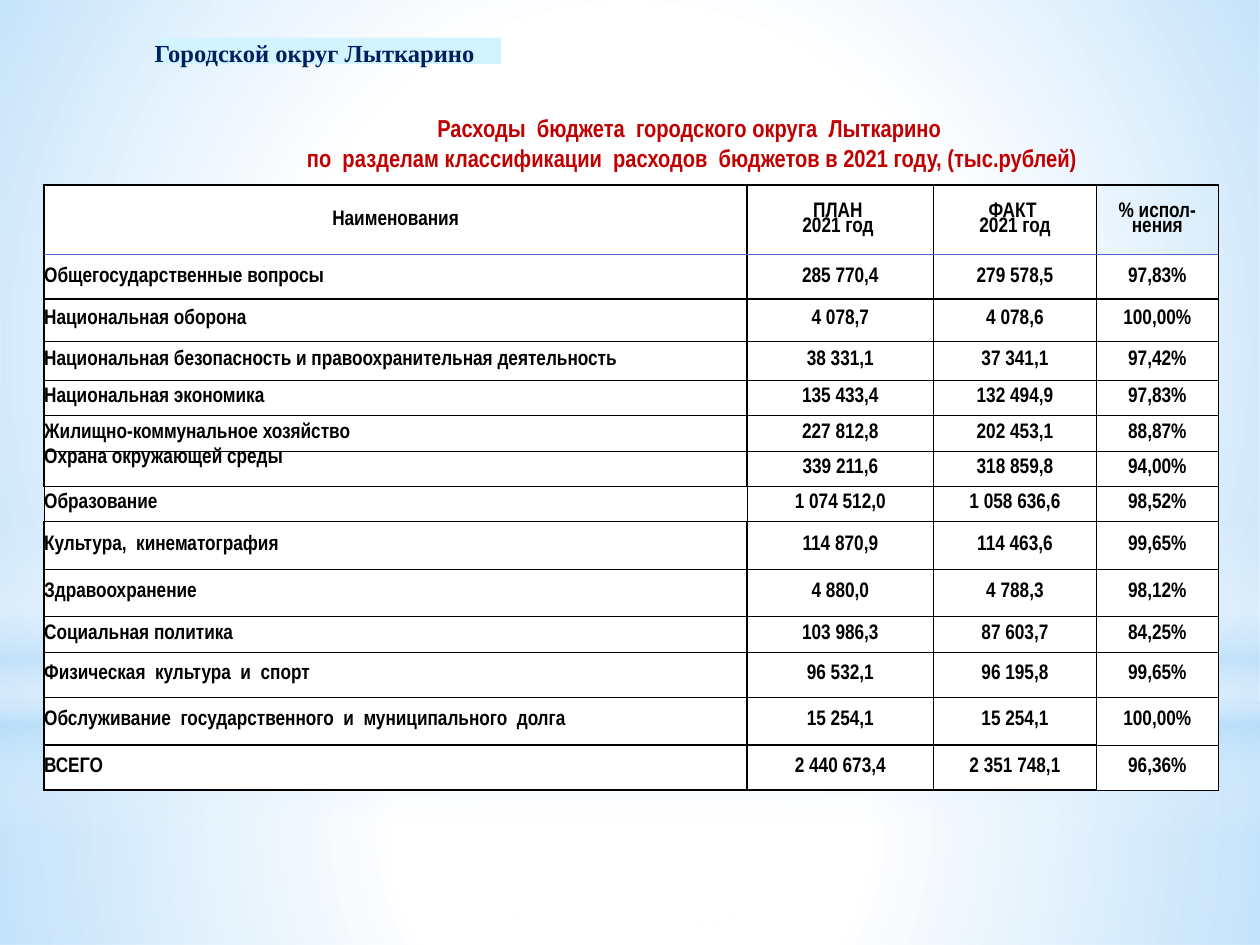
from copy import deepcopy
from dataclasses import dataclass

from lxml import etree
from pptx import Presentation
from pptx.dml.color import RGBColor
from pptx.enum.shapes import MSO_CONNECTOR, MSO_SHAPE
from pptx.enum.text import MSO_ANCHOR, PP_ALIGN
from pptx.oxml.ns import qn
from pptx.util import Cm, Pt

RECTANGLE, OVAL = MSO_SHAPE.RECTANGLE, MSO_SHAPE.OVAL
STRAIGHT = MSO_CONNECTOR.STRAIGHT
TOP, MIDDLE = MSO_ANCHOR.TOP, MSO_ANCHOR.MIDDLE
LEFT, CENTER = PP_ALIGN.LEFT, PP_ALIGN.CENTER

COLORS = {
    "white": "FFFFFF", "sky": "B4DCFA", "label": "D3F4FF", "navy": "002060",
    "black": "000000", "red": "C00000", "rule": "4E67C8",
}
NARROW, SERIF = "Arial Narrow", "Times New Roman"
PLAIN_TABLE = "{2D5ABB26-0587-4C30-8999-92F81FD0307C}"
SIDES = "LRTB"
THIN, THICK = 0.5, 1


@dataclass
class Glow:
    geometry: MSO_SHAPE
    top: float
    height: float
    stops: list[tuple[int, str, int]]
    radial: bool = True


@dataclass
class Expense:
    name: str
    plan: str
    fact: str
    share: str
    height: float


GLOWS = [
    Glow(RECTANGLE, 14.17, 4.88, [(0, "white", 91), (37, "white", 76), (100, "sky", 79)]),
    Glow(RECTANGLE, 0, 14.17, [(0, "white", 89), (48, "white", 62), (100, "sky", 79)]),
    Glow(RECTANGLE, 10.46, 6.35,
         [(0, "white", 0), (29, "white", 30), (45, "sky", 40),
          (55, "white", 26), (65, "sky", 60), (100, "white", 0)], radial=False),
    Glow(OVAL, 4.45, 14.17, [(0, "white", 100), (56, "white", 0)]),
]

EXPENSES = [
    Expense("Наименования", "ПЛАН \v2021 год ", "ФАКТ \v2021 год", "% испол-\vнения", 1.42),
    Expense("Общегосударственные вопросы", "285 770,4", "279 578,5", "97,83%", 0.88),
    Expense("Национальная оборона", "4 078,7", "4 078,6", "100,00%", 0.85),
    Expense("Национальная безопасность и правоохранительная деятельность",
            "38 331,1", "37 341,1", "97,42%", 0.79),
    Expense("Национальная экономика", "135 433,4", "132 494,9", "97,83%", 0.71),
    Expense("Жилищно-коммунальное хозяйство", "227 812,8", "202 453,1", "88,87%", 0.71),
    Expense("Охрана окружающей среды", "339 211,6", "318 859,8", "94,00%", 0.71),
    Expense("Образование", "1 074 512,0", "1 058 636,6", "98,52%", 0.71),
    Expense("Культура,  кинематография", "114 870,9", "114 463,6", "99,65%", 0.97),
    Expense("Здравоохранение", "4 880,0", "4 788,3", "98,12%", 0.94),
    Expense("Социальная политика", "103 986,3", "87 603,7", "84,25%", 0.74),
    Expense("Физическая  культура  и  спорт", "96 532,1", "96 195,8", "99,65%", 0.89),
    Expense("Обслуживание  государственного  и  муниципального  долга",
            "15 254,1", "15 254,1", "100,00%", 0.97),
    Expense("ВСЕГО", "2 440 673,4", "2 351 748,1", "96,36%", 0.91),
]
COLUMN_WIDTHS = [14.17, 3.76, 3.28, 2.46]
TABLE_LEFT, TABLE_TOP = 0.89, 3.73
EDUCATION, DEBT, TOTAL = 7, 12, 13
ECOLOGY = 6
SHARE_COLUMN = 3


def rgb(color: str) -> RGBColor:
    return RGBColor.from_string(COLORS[color])


def add_color(parent, color: str):
    fill = etree.SubElement(parent, qn("a:srgbClr"))
    fill.set("val", COLORS[color])
    return fill


def draw_glow(slide, glow: Glow) -> None:
    shape = slide.shapes.add_shape(glow.geometry, 0, Cm(glow.top), Cm(25.4), Cm(glow.height))
    shape.shadow.inherit = False
    shape.line.fill.background()
    shape.fill.gradient()
    gradient = shape.fill._xPr.find(qn("a:gradFill"))
    for part in list(gradient):
        gradient.remove(part)
    stops = etree.SubElement(gradient, qn("a:gsLst"))
    for position, color, opacity in glow.stops:
        stop = etree.SubElement(stops, qn("a:gs"), pos=str(position * 1000))
        etree.SubElement(add_color(stop, color), qn("a:alpha"), val=str(opacity * 1000))
    if glow.radial:
        circle = etree.SubElement(gradient, qn("a:path"), path="circle")
        etree.SubElement(circle, qn("a:fillToRect"), {side: "50000" for side in "ltrb"})
    else:
        etree.SubElement(gradient, qn("a:lin"), ang="5400000", scaled="0")


def format_text(frame, font: str, size: float, color: str, align, spacing: float = 1) -> None:
    for paragraph in frame.paragraphs:
        paragraph.alignment = align
        paragraph.line_spacing = spacing
        for run in paragraph.runs:
            run.font.name, run.font.size, run.font.bold = font, Pt(size), True
            run.font.color.rgb = rgb(color)
        for line_break in paragraph._p.findall(qn("a:br")):
            line_break.append(deepcopy(paragraph.runs[0]._r.rPr))


def border_widths(row: int, column: int) -> dict[str, float]:
    if row == 0:
        return dict.fromkeys("LRT", THICK)
    if row == 1:
        return dict.fromkeys("LRB", THICK)
    widths = {"L": THICK, "R": THICK, "T": THICK if row == 2 else THIN, "B": THIN}
    if column < SHARE_COLUMN:
        if row == EDUCATION:
            widths["L"] = THIN
            widths["R"] = THICK if column == 2 else THIN
        if row in (DEBT, TOTAL):
            widths["B"] = THICK
        if row == TOTAL:
            widths["T"] = THICK
    return widths


def draw_borders(cell, widths: dict[str, float]) -> None:
    properties = cell._tc.get_or_add_tcPr()
    for place, side in enumerate(SIDES):
        border = etree.Element(qn(f"a:ln{side}"))
        if side in widths:
            border.set("w", str(Pt(widths[side])))
            add_color(etree.SubElement(border, qn("a:solidFill")), "black")
        else:
            etree.SubElement(border, qn("a:noFill"))
        properties.insert(place, border)


def draw_expenses(slide) -> None:
    frame = slide.shapes.add_table(
        len(EXPENSES), len(COLUMN_WIDTHS), Cm(TABLE_LEFT), Cm(TABLE_TOP),
        Cm(sum(COLUMN_WIDTHS)), Cm(sum(expense.height for expense in EXPENSES)))
    table = frame.table
    table.first_row = table.horz_banding = False
    table._tbl.tblPr.find(qn("a:tableStyleId")).text = PLAIN_TABLE
    for column, width in enumerate(COLUMN_WIDTHS):
        table.columns[column].width = Cm(width)
    for row, expense in enumerate(EXPENSES):
        table.rows[row].height = Cm(expense.height)
        values = (expense.name, expense.plan, expense.fact, expense.share)
        for column, value in enumerate(values):
            cell = table.cell(row, column)
            cell.margin_left = cell.margin_right = cell.margin_top = cell.margin_bottom = 0
            cell.vertical_anchor = TOP if (row, column) == (ECOLOGY, 0) else MIDDLE
            cell.text_frame.text = value
            align = LEFT if column == 0 and row > 0 else CENTER
            format_text(cell.text_frame, NARROW, 12, "black", align, 0.8)
            if (row, column) == (0, SHARE_COLUMN):
                cell.fill.background()
            else:
                cell.fill.solid()
                cell.fill.fore_color.rgb = rgb("white")
            draw_borders(cell, border_widths(row, column))


def draw_district(slide) -> None:
    district = slide.shapes.add_shape(RECTANGLE, Cm(3.12), Cm(0.76), Cm(6.98), Cm(0.53))
    district.shadow.inherit = False
    district.fill.solid()
    district.fill.fore_color.rgb = rgb("label")
    district.line.fill.background()
    frame = district.text_frame
    frame.margin_left = frame.margin_right = frame.margin_top = frame.margin_bottom = 0
    frame.vertical_anchor = TOP
    frame.word_wrap = True
    frame.text = "Городской округ Лыткарино"
    format_text(frame, SERIF, 14, "navy", LEFT)


def draw_header_rule(slide) -> None:
    height = Cm(TABLE_TOP + EXPENSES[0].height - 0.02)
    rule = slide.shapes.add_connector(
        STRAIGHT, Cm(TABLE_LEFT), height, Cm(TABLE_LEFT + sum(COLUMN_WIDTHS)), height)
    rule.line.color.rgb = rgb("rule")
    rule.line.width = Pt(0.75)
    etree.SubElement(rule._element.spPr, qn("a:effectLst"))


def draw_title(slide) -> None:
    title = slide.shapes.add_textbox(Cm(2.92), Cm(2.16), Cm(22.07), Cm(1.45))
    title.text_frame.word_wrap = True
    title.text_frame.text = (
        "Расходы  бюджета  городского округа  Лыткарино \n"
        "по  разделам классификации  расходов  бюджетов в 2021 году, (тыс.рублей)")
    format_text(title.text_frame, NARROW, 14, "red", CENTER)


def main() -> None:
    deck = Presentation()
    deck.slide_width, deck.slide_height = Cm(25.4), Cm(19.05)
    slide = deck.slides.add_slide(deck.slide_layouts[6])
    for glow in GLOWS:
        draw_glow(slide, glow)
    draw_district(slide)
    draw_expenses(slide)
    draw_header_rule(slide)
    draw_title(slide)
    deck.save("out.pptx")


if __name__ == "__main__":
    main()
